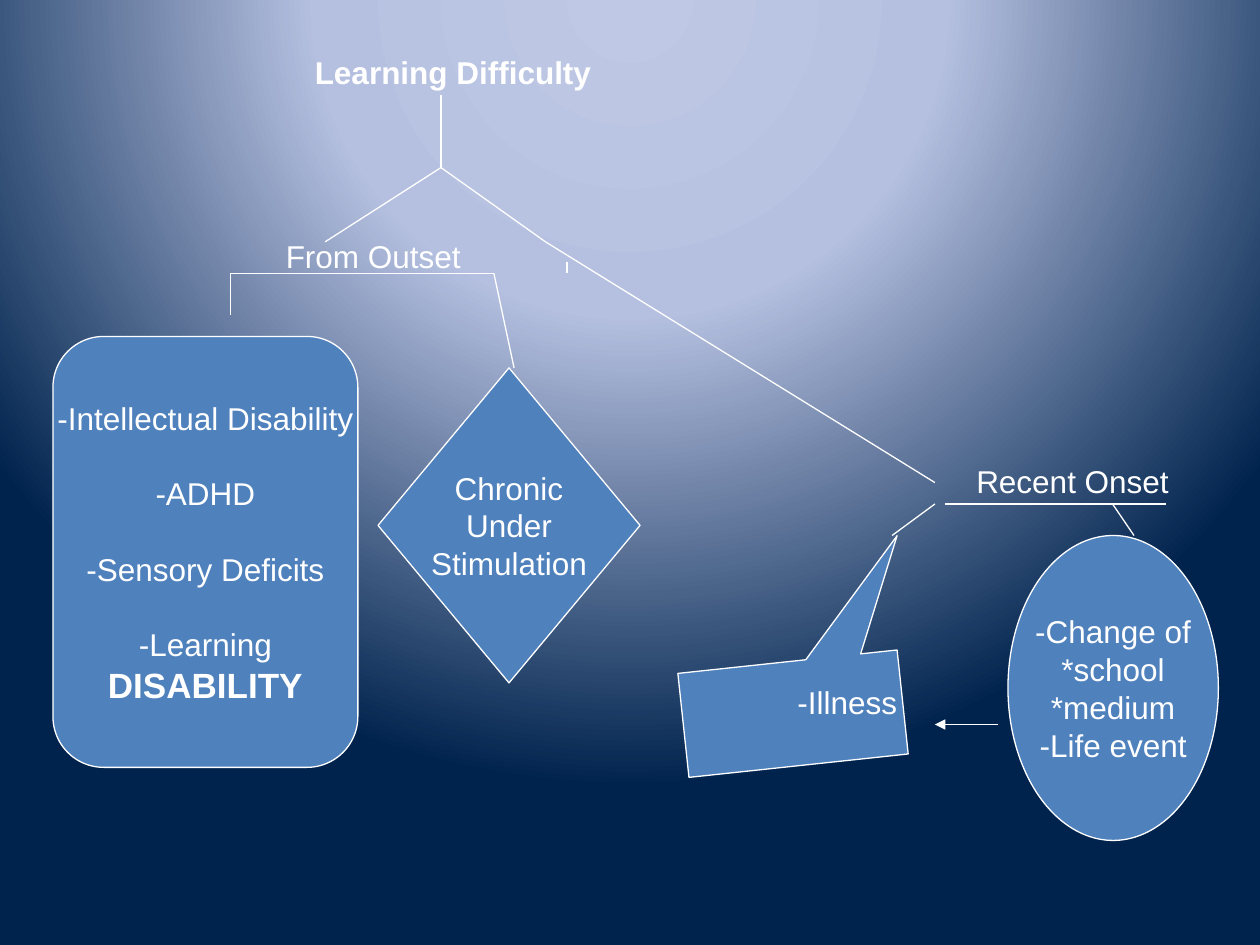
from lxml import etree
from pptx import Presentation, util as u
from pptx.dml.color import RGBColor
from pptx.enum import shapes, text
from pptx.oxml import parse_xml
from pptx.oxml.ns import qn, nsdecls

INK = {"white": "FFFFFF", "blue": "4F81BD",
       "glow": "BFC9E5", "mid": "B5C0E0", "navy": "00234D"}
GEO = shapes.MSO_SHAPE


class Chart:
    """Style and current slide, with a method for each kind of element."""
    font, size, width = "Arial", 18, 0.75

    def __init__(self, slide):
        self.slide = slide

    def back(self, stops):
        marks = "".join(f'<a:gs pos="{pos * 1000}"><a:srgbClr val="{INK[ink]}"/></a:gs>'
                        for pos, ink in stops)
        bg = parse_xml(
            f'<p:bg {nsdecls("p", "a")}><p:bgPr><a:gradFill rotWithShape="1">'
            f'<a:gsLst>{marks}</a:gsLst><a:path path="circle">'
            '<a:fillToRect l="50000" t="-80000" r="50000" b="180000"/></a:path>'
            '</a:gradFill><a:effectLst/></p:bgPr></p:bg>')
        self.slide.element.cSld.insert(0, bg)

    def stroke(self, line):
        line.color.rgb = RGBColor.from_string(INK["white"])
        line.width = u.Pt(self.width)

    def fill_in(self, frame, rows, align, bold=False, gap=0):
        """Each row is a string or a (string, size, bold, gap) tuple."""
        for i, row in enumerate(rows):
            words, size, heavy, space = (
                row if isinstance(row, tuple) else (row, self.size, bold, gap))
            para = frame.paragraphs[0] if i == 0 else frame.add_paragraph()
            para.alignment = align
            if i and space:
                para.space_before = u.Pt(space)
            run = para.add_run()
            run.text = words
            run.font.name, run.font.size, run.font.bold = self.font, u.Pt(size), heavy
            run.font.color.rgb = RGBColor.from_string(INK["white"])

    def label(self, words, box, bold=False, wrap=False):
        frame = self.slide.shapes.add_textbox(*map(u.Inches, box)).text_frame
        frame.word_wrap = wrap
        frame.auto_size = text.MSO_AUTO_SIZE.SHAPE_TO_FIT_TEXT
        self.fill_in(frame, [words], text.PP_ALIGN.LEFT, bold)

    def node(self, kind, box, rows=(), gap=0):
        shape = self.slide.shapes.add_shape(kind, *map(u.Inches, box))
        shape.shadow.inherit = False
        shape.fill.solid()
        shape.fill.fore_color.rgb = RGBColor.from_string(INK["blue"])
        self.stroke(shape.line)
        frame = shape.text_frame
        frame.word_wrap = False
        frame.vertical_anchor = text.MSO_ANCHOR.MIDDLE
        self.fill_in(frame, rows, text.PP_ALIGN.CENTER, gap=gap)
        return shape

    def line(self, start, end, arrow=False):
        link = self.slide.shapes.add_connector(
            shapes.MSO_CONNECTOR.STRAIGHT, *map(u.Inches, start + end))
        self.stroke(link.line)
        props = link.element.spPr
        if arrow:
            etree.SubElement(props.find(qn("a:ln")), qn("a:tailEnd"), type="triangle")
        etree.SubElement(props, qn("a:effectLst"))


def main():
    deck = Presentation()
    deck.slide_width, deck.slide_height = u.Inches(10), u.Inches(7.5)
    tree = Chart(deck.slides.add_slide(deck.slide_layouts[6]))
    tree.back([(0, "glow"), (40, "mid"), (100, "navy")])

    # Root and its two branches
    fork, bend = (3.5, 1.33), (4.33, 1.92)
    tree.label("Learning Difficulty", (2.4, 0.37, 2.42, 0.4), bold=True)
    tree.line((3.5, 0.75), fork)
    tree.line(fork, (2.58, 1.92))
    tree.line(fork, bend)
    tree.line(bend, (7.42, 3.83))
    tree.line((4.5, 2.17), (4.5, 2.08))

    # From the outset
    left, right = (1.83, 2.17), (3.92, 2.17)
    tree.label("From Outset", (2.17, 1.83, 2.44, 0.7), wrap=True)
    tree.line((2.5, 2.17), right)
    tree.line((2.58, 2.17), left)
    tree.line(left, (1.83, 2.5))
    tree.line(right, (4.08, 2.92))
    tree.node(GEO.FLOWCHART_ALTERNATE_PROCESS, (0.42, 2.67, 2.42, 3.42),
              ["-Intellectual Disability", "-ADHD", "-Sensory Deficits",
               "-Learning", ("DISABILITY", 20, True, 0)], gap=21.6)
    tree.node(GEO.DIAMOND, (3, 2.92, 2.08, 2.5), ["Chronic", "Under", "Stimulation"])

    # Recent onset
    tree.line((7.5, 4), (9.25, 4))
    tree.line((7.42, 4), (7.08, 4.25))
    tree.line((8.83, 4), (9, 4.25))
    call = tree.node(GEO.RECTANGULAR_CALLOUT, (5.42, 5.25, 1.75, 0.83))
    call.rotation = 353.9
    call.adjustments[0], call.adjustments[1] = -0.555, 1.587
    for flip in ("flipH", "flipV"):
        call.element.spPr.xfrm.set(flip, "1")
    tree.label("Recent Onset", (7.65, 3.62, 1.73, 0.4))
    tree.label("-Illness", (6.23, 5.37, 0.99, 0.7))
    tree.node(GEO.OVAL, (8, 4.25, 1.67, 2.42),
              ["-Change of", "*school", "*medium", "-Life event"])
    tree.line((7.92, 5.75), (7.42, 5.75), arrow=True)

    deck.save("out.pptx")


if __name__ == "__main__":
    main()
